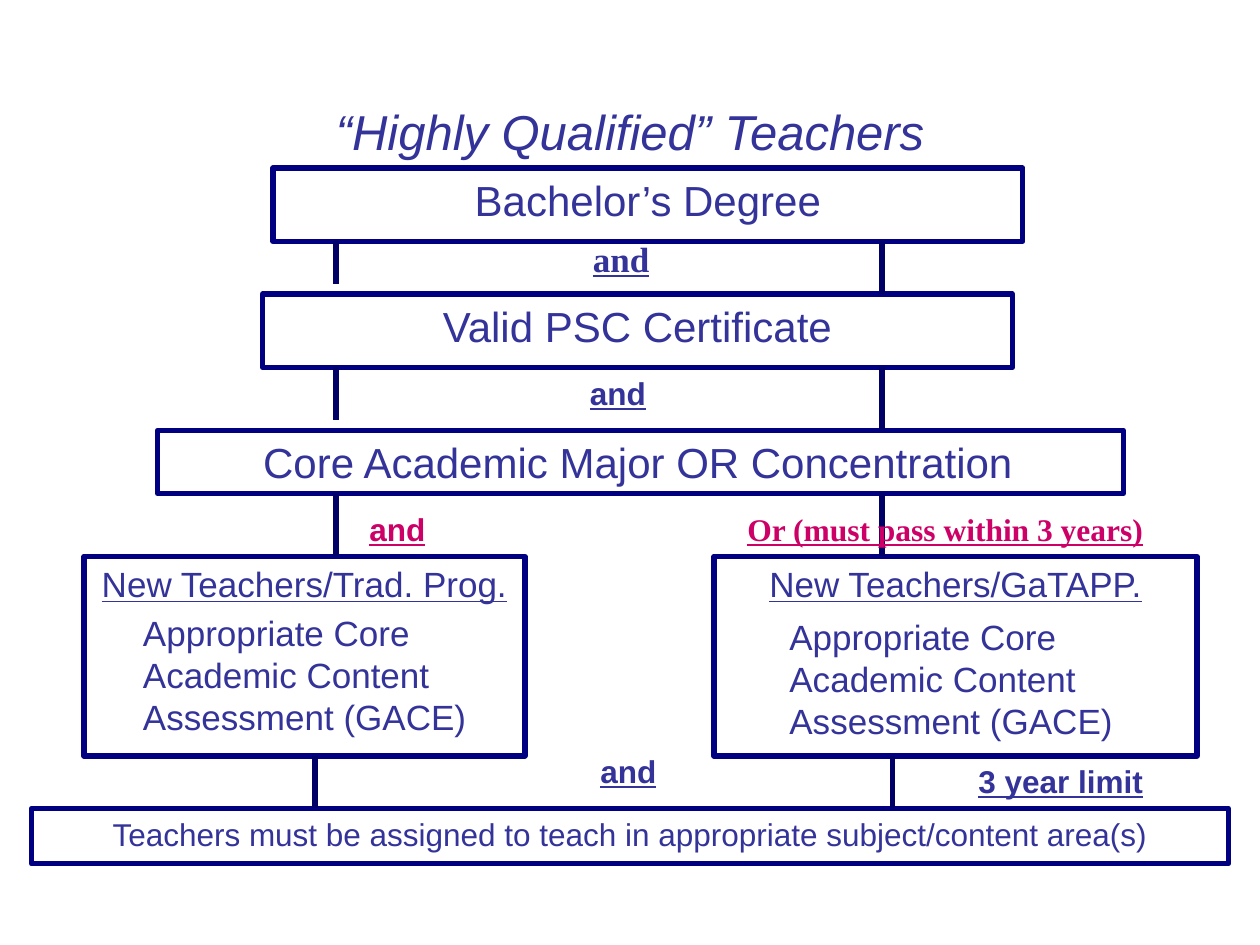
from lxml.etree import SubElement
from pptx import Presentation
from pptx.dml.color import RGBColor
from pptx.enum.shapes import MSO_CONNECTOR as LINE, MSO_SHAPE as SHAPE
from pptx.enum.text import MSO_ANCHOR as ANCHOR, PP_ALIGN as ALIGN
from pptx.oxml.ns import qn
from pptx.util import Inches, Pt

COLORS = {"text": "333399", "border": "000080", "link": "000066", "accent": "CC0066"}
COLS, ROWS = 120, 90
SANS, SERIF = "Arial", "Times New Roman"
LABEL = {"bold": True, "underline": True}
ASSESSMENT = "Appropriate Core Academic Content Assessment (GACE)"


def rgb(name):
    return RGBColor.from_string(COLORS[name])


class FlowSlide:
    """Draws on one slide, measured in columns and rows of its grid."""

    def __init__(self, prs):
        self.s = prs.slides.add_slide(prs.slide_layouts[6])
        self.col, self.row = prs.slide_width / COLS, prs.slide_height / ROWS

    def place(self, x, y, w, h):
        return (round(x * self.col), round(y * self.row),
                round(w * self.col), round(h * self.row))

    def add_text(self, p, text, size, font=SANS, color="text", align=ALIGN.CENTER,
                 indent=0, before=0, **style):
        p.alignment, p.space_before = align, Pt(before)
        if indent:
            p._p.get_or_add_pPr().set("marL", str(Inches(indent)))
        r = p.add_run()
        r.text = text
        for key, value in {"name": font, "size": Pt(size), **style}.items():
            setattr(r.font, key, value)
        r.font.color.rgb = rgb(color)

    def box(self, at, text, size, **style):
        sp = self.s.shapes.add_shape(SHAPE.RECTANGLE, *self.place(*at))
        sp.shadow.inherit = False
        sp.fill.background()
        sp.line.color.rgb, sp.line.width = rgb("border"), Pt(3)
        tf = sp.text_frame
        tf.word_wrap, tf.vertical_anchor = True, ANCHOR.TOP
        self.add_text(tf.paragraphs[0], text, size, **style)
        return tf

    def label(self, at, text, size, wrap=True, anchor=ANCHOR.TOP, **style):
        tf = self.s.shapes.add_textbox(*self.place(*at)).text_frame
        tf.word_wrap, tf.vertical_anchor = wrap, anchor
        self.add_text(tf.paragraphs[0], text, size, **style)

    def link(self, x, top, bottom):
        left, y, _, h = self.place(x, top, 0, bottom - top)
        c = self.s.shapes.add_connector(LINE.STRAIGHT, left, y, left, y + h)
        c.line.color.rgb, c.line.width = rgb("link"), Pt(3)
        SubElement(c._element.spPr, qn("a:effectLst"))


def main():
    prs = Presentation()
    prs.slide_width, prs.slide_height = Inches(10), Inches(7.5)
    flow = FlowSlide(prs)

    # Title
    flow.label((6, 9, 108, 6.84), "“Highly Qualified” Teachers", 28,
               anchor=ANCHOR.BOTTOM, italic=True)

    # Requirements for every teacher
    flow.box((26, 16, 71.4, 7), "Bachelor’s Degree", 24)
    flow.box((25, 28, 71.4, 7), "Valid PSC Certificate", 24)
    flow.box((15, 41, 92, 6), "Core Academic Major OR Concentration", 24,
             align=ALIGN.LEFT, indent=0.74)

    # Two routes for new teachers
    route = flow.box((8, 53, 42, 19), "New Teachers/Trad. Prog.", 20, underline=True)
    flow.add_text(route.add_paragraph(), ASSESSMENT, 20, align=ALIGN.LEFT,
                  indent=0.37, before=4)
    flow.box((68, 53, 46, 19), "New Teachers/GaTAPP.", 20, underline=True)
    flow.label((74, 58, 39, 13.2), ASSESSMENT, 20, align=ALIGN.LEFT)

    # Assignment
    flow.box((3, 77, 114, 5.28),
             "Teachers must be assigned to teach in appropriate subject/content area(s)", 18)

    # Lines between the levels
    for x, top, bottom in [(32, 23, 27), (84, 23, 28), (32, 35, 40), (84, 35, 41),
                           (32, 47, 53), (84, 47, 53), (30, 72, 77), (85, 72, 77)]:
        flow.link(x, top, bottom)

    # Conditions beside the lines
    flow.label((51, 22, 16.32, 5.2), "and", 20, font=SERIF, **LABEL)
    flow.label((70, 48, 43, 4.8), "Or (must pass within 3 years)", 18, font=SERIF,
               color="accent", align=ALIGN.LEFT, **LABEL)
    for x, y, w, text, color in [(55, 35, 7.8, "and", "text"),
                                 (34, 48, 7.8, "and", "accent"),
                                 (56, 71, 7.8, "and", "text"),
                                 (92, 72, 18.12, "3 year limit", "text")]:
        flow.label((x, y, w, 4.8), text, 18, wrap=False, color=color,
                   align=ALIGN.LEFT, **LABEL)

    prs.save("out.pptx")


if __name__ == "__main__":
    main()
